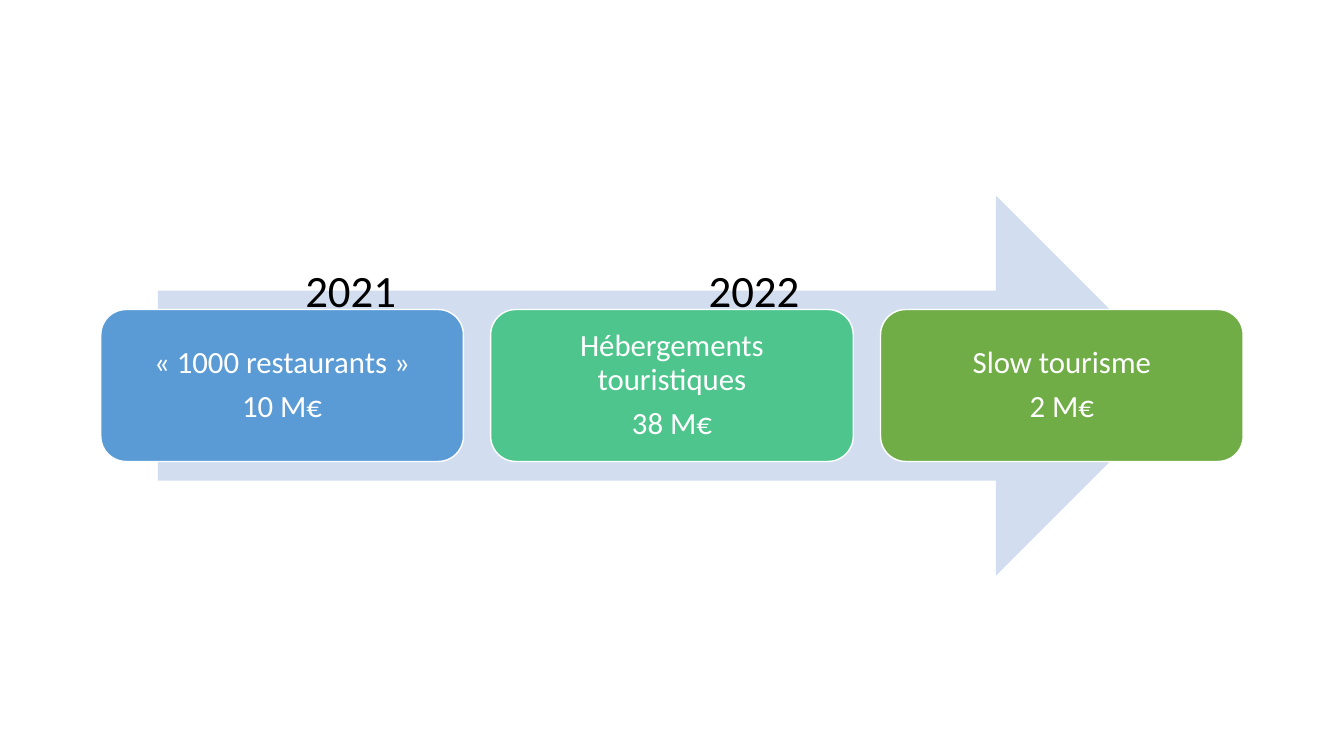
import pptx
import pptx.dml.color
import pptx.enum.shapes
import pptx.enum.text
import pptx.oxml.ns
import pptx.util
from lxml import etree

Inches = pptx.util.Inches
Pt = pptx.util.Pt
SHAPES = pptx.enum.shapes.MSO_SHAPE
FONT = "Calibri"
COLOURS = {
    "arrow": "D2DEEF",
    "restaurants": "5B9BD5",
    "lodging": "4DC58D",
    "slow": "70AD47",
    "white": "FFFFFF",
    "black": "000000",
}
FUNDS = [
    ("restaurants", "«\u00a01000 restaurants\u00a0»", "10 M€"),
    ("lodging", "Hébergements touristiques", "38 M€"),
    ("slow", "Slow tourisme", "2 M€"),
]


def colour(name):
    return pptx.dml.color.RGBColor.from_string(COLOURS[name])


def add_filled(slide, preset, box, fill):
    part = slide.shapes.add_shape(preset, *map(Inches, box))
    part.shadow.inherit = False
    part.fill.solid()
    part.fill.fore_color.rgb = colour(fill)
    return part


def style_runs(paragraph, size, text_colour):
    for run in paragraph.runs:
        run.font.name = FONT
        run.font.size = Pt(size)
        run.font.color.rgb = colour(text_colour)


def add_fund(slide, box, fill, title, amount):
    card = add_filled(slide, SHAPES.ROUNDED_RECTANGLE, box, fill)
    card.line.color.rgb = colour("white")
    card.line.width = Pt(1)
    frame = card.text_frame
    frame.word_wrap = True
    frame.vertical_anchor = pptx.enum.text.MSO_ANCHOR.MIDDLE
    frame.margin_left = frame.margin_right = Inches(0.16)
    frame.margin_top = frame.margin_bottom = Inches(0.09)
    frame.text = f"{title}\n{amount}"
    for paragraph in frame.paragraphs:
        paragraph.alignment = pptx.enum.text.PP_ALIGN.CENTER
        paragraph.line_spacing = 0.9
        paragraph.space_after = Pt(7.7)
        style_runs(paragraph, 22, "white")


def add_timeline(slide, box):
    left, top, width, height = box
    # Arrow: 90 % of the width, centred behind the cards
    arrow_width = 0.9 * width
    arrow_box = (left + (width - arrow_width) / 2, top, arrow_width, height)
    arrow = add_filled(slide, SHAPES.RIGHT_ARROW, arrow_box, "arrow")
    arrow.line.fill.background()
    # Cards: equal columns, 40 % of the height
    gap = 0.27
    card_width = (width - gap * (len(FUNDS) - 1)) / len(FUNDS)
    card_height = 0.4 * height
    card_top = top + (height - card_height) / 2
    for column, fund in enumerate(FUNDS):
        card_left = left + column * (card_width + gap)
        add_fund(slide, (card_left, card_top, card_width, card_height), *fund)


def add_years(slide, box):
    years = slide.shapes.add_textbox(*map(Inches, box)).text_frame
    years.word_wrap = True
    paragraph = years.paragraphs[0]
    paragraph.text = "\t2021\t2022"
    # Tab stops for the two years
    qn = pptx.oxml.ns.qn
    stops = etree.SubElement(paragraph._p.get_or_add_pPr(), qn("a:tabLst"))
    for position in (1, 5):
        etree.SubElement(stops, qn("a:tab"), pos=str(Inches(position)), algn="l")
    style_runs(paragraph, 32, "black")


def main():
    deck = pptx.Presentation()
    deck.slide_width = Inches(13.33)
    deck.slide_height = Inches(7.5)
    slide = deck.slides.add_slide(deck.slide_layouts[6])
    add_timeline(slide, (1, 1.94, 11.33, 3.77))
    add_years(slide, (1.93, 2.56, 7.24, 0.64))
    deck.save("out.pptx")


if __name__ == "__main__":
    main()
